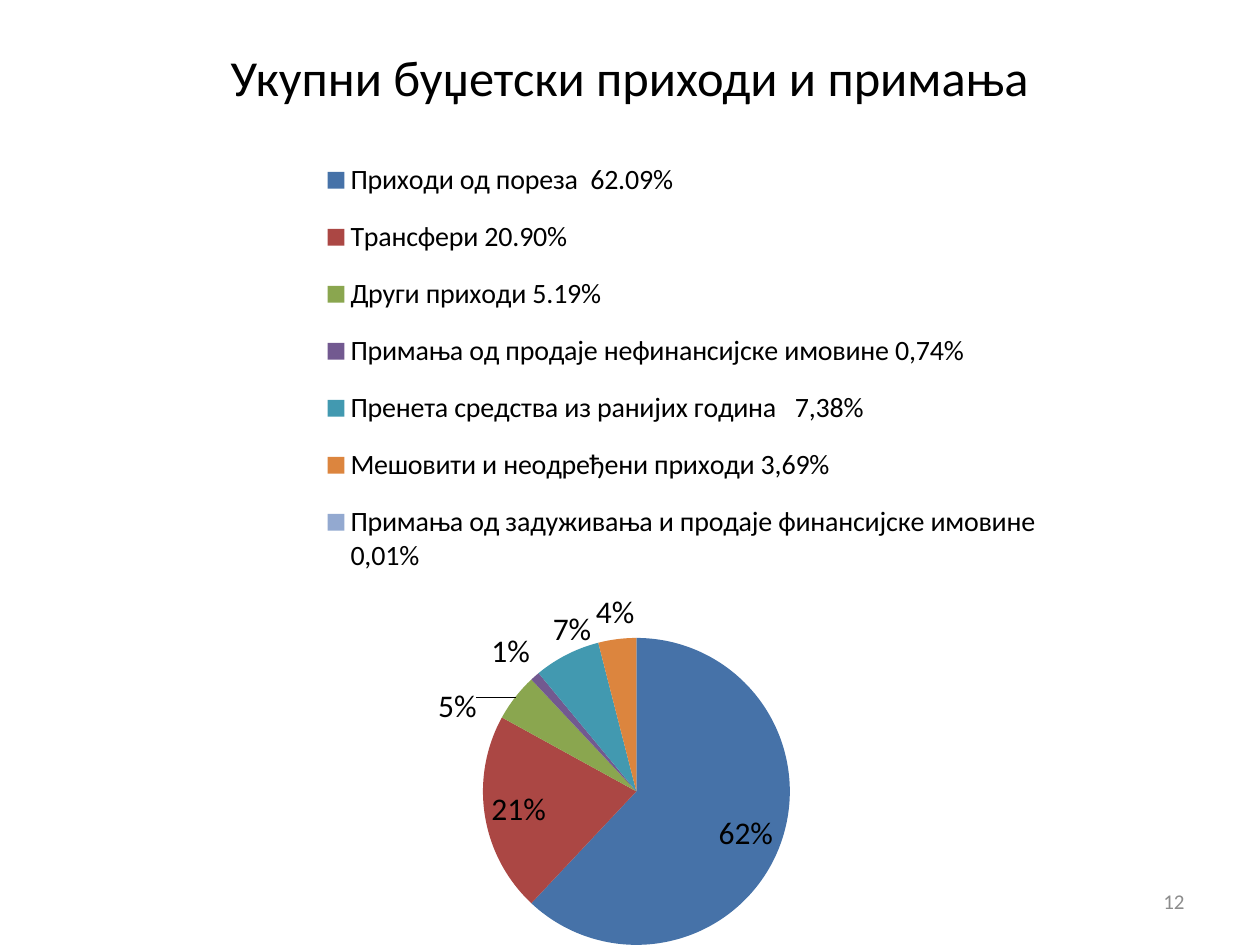
from dataclasses import dataclass

from lxml.etree import SubElement
from pptx import Presentation
from pptx.chart.data import CategoryChartData
from pptx.dml.color import RGBColor
from pptx.enum.chart import XL_CHART_TYPE as ChartType
from pptx.enum.chart import XL_LABEL_POSITION as LabelPosition
from pptx.enum.chart import XL_LEGEND_POSITION as LegendPosition
from pptx.enum.text import MSO_ANCHOR as Anchor
from pptx.enum.text import PP_ALIGN as Align
from pptx.oxml.ns import qn
from pptx.util import Pt

FONT = "Calibri"
COLORS = {
    "text": "000000",
    "number": "8C8C8C",
    "taxes": "4672A8",
    "transfers": "AB4744",
    "other": "8AA64F",
    "property": "725990",
    "carried": "4299B0",
    "mixed": "DC853E",
    "borrowing": "93A9D0",
}


@dataclass
class Income:
    label: str
    percent: int
    color: str


@dataclass
class Area:
    """Part of the chart, as fractions of its width and height."""
    x: float
    y: float
    w: float
    h: float


INCOMES = [
    Income("Приходи од пореза  62.09%", 62, "taxes"),
    Income("Трансфери 20.90%", 21, "transfers"),
    Income("Други приходи 5.19%", 5, "other"),
    Income("Примања од продаје нефинансијске имовине 0,74%", 1, "property"),
    Income("Пренета средства из ранијих година   7,38%", 7, "carried"),
    Income("Мешовити и неодређени приходи 3,69%", 4, "mixed"),
    Income("Примања од задуживања и продаје финансијске имовине 0,01%", 0, "borrowing"),
]


def style_font(font, size: float, color: str) -> None:
    font.name = FONT
    font.size = Pt(size)
    font.color.rgb = RGBColor.from_string(COLORS[color])


def fill_text(shape, text: str, size: float, color: str, align) -> None:
    frame = shape.text_frame
    frame.word_wrap = True
    frame.vertical_anchor = Anchor.MIDDLE
    frame.text = text
    paragraph = frame.paragraphs[0]
    paragraph.alignment = align
    style_font(paragraph.runs[0].font, size, color)


def place(parent, index: int, area: Area, inner: bool = False) -> None:
    """Give a chart part a manual layout, as its child at the index."""
    for old in parent.findall(qn("c:layout")):
        parent.remove(old)
    layout = parent.makeelement(qn("c:layout"))
    parent.insert(index, layout)
    manual = SubElement(layout, qn("c:manualLayout"))
    settings = [("layoutTarget", "inner")] if inner else []
    settings += [("xMode", "edge"), ("yMode", "edge")]
    settings += [(key, str(getattr(area, key))) for key in "xywh"]
    for tag, value in settings:
        SubElement(manual, qn(f"c:{tag}")).set("val", value)


def add_income_chart(slide, incomes: list[Income]) -> None:
    data = CategoryChartData()
    data.categories = [income.label for income in incomes]
    data.add_series("Series 1", [income.percent for income in incomes])
    chart = slide.shapes.add_chart(
        ChartType.PIE, Pt(30), Pt(66), Pt(648), Pt(474), data).chart
    chart.has_title = False
    style_font(chart.font, 18, "text")

    # Slices
    plot = chart.plots[0]
    plot.vary_by_categories = True
    for index, income in enumerate(incomes):
        fill = plot.series[0].points[index].format.fill
        fill.solid()
        fill.fore_color.rgb = RGBColor.from_string(COLORS[income.color])
    place(chart._chartSpace.chart.plotArea, 0, Area(0.09, 0.63, 0.85, 0.37), inner=True)

    # Percent labels
    plot.has_data_labels = True
    labels = plot.data_labels
    labels.show_value = False
    labels.show_percentage = True
    labels.number_format = "0%"
    labels.number_format_is_linked = False
    labels.position = LabelPosition.BEST_FIT
    style_font(labels.font, 18, "text")

    # Legend
    chart.has_legend = True
    legend = chart.legend
    legend.position = LegendPosition.TOP
    legend.include_in_layout = False
    style_font(legend.font, 16, "text")
    place(legend._element, 1, Area(0.23, 0.03, 0.65, 0.55))


def main() -> None:
    presentation = Presentation()
    presentation.slide_width, presentation.slide_height = Pt(720), Pt(540)
    slide = presentation.slides.add_slide(presentation.slide_layouts[5])

    # Title
    title = slide.shapes.title
    title.left, title.top, title.width, title.height = Pt(36), Pt(21.6), Pt(648), Pt(44.6)
    fill_text(title, "Укупни буџетски приходи и примања", 28.8, "text", Align.CENTER)

    add_income_chart(slide, INCOMES)

    # Slide number
    number = slide.shapes.add_textbox(Pt(516), Pt(500.5), Pt(168), Pt(28.8))
    fill_text(number, "12", 12, "number", Align.RIGHT)

    presentation.save("out.pptx")


if __name__ == "__main__":
    main()
